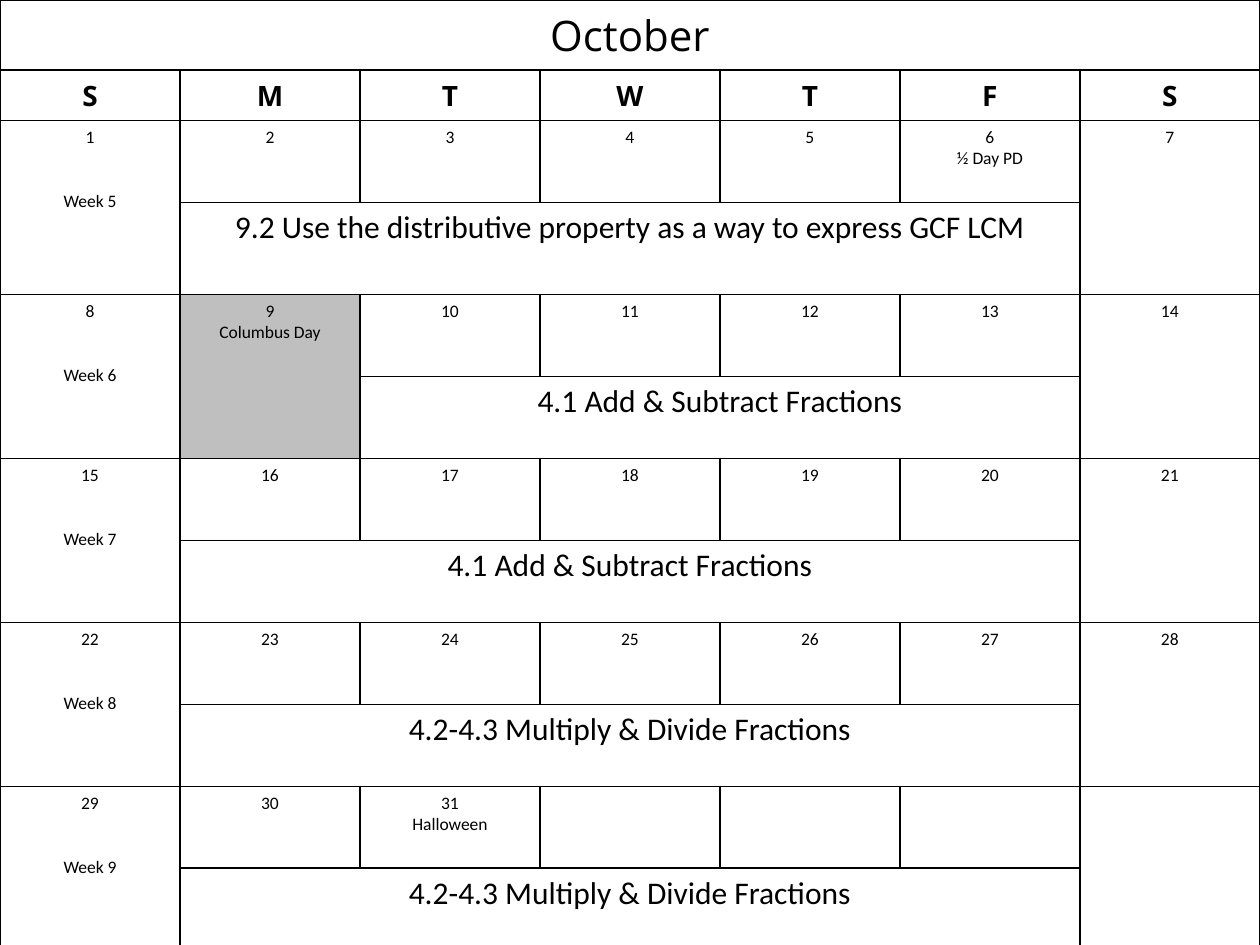
import lxml.etree
import pptx
import pptx.dml.color
import pptx.enum.text
import pptx.oxml.ns
import pptx.util

PX = 914400 // 126
PAGE_WIDTH, PAGE_HEIGHT = 1260, 945
BLACK, WHITE, GREY = "000000", "FFFFFF", "BFBFBF"
DAYS = 7
TITLE_HEIGHT, HEADER_HEIGHT, HALF_WEEK, TALL_HALF = 66, 48, 82, 92
BLANK_LINES = 24.4  # points between a Sunday's date and its week label

LESSONS = [
    "9.2 Use the distributive property as a way to express GCF LCM",
    "4.1 Add & Subtract Fractions",
    "4.1 Add & Subtract Fractions",
    "4.2-4.3 Multiply & Divide Fractions",
    "4.2-4.3 Multiply & Divide Fractions",
]
EVENTS = {6: "½ Day PD", 9: "Columbus Day", 31: "Halloween"}
HOLIDAY, LAST_DATE, FIRST_WEEK = 9, 31, 5


def color(value):
    return pptx.dml.color.RGBColor.from_string(value)


def write(frame, *lines, size=10, font="Calibri", bold=False, gap=0):
    """Fill a text frame with centred lines, gap points apart."""
    for index, line in enumerate(lines):
        para = frame.add_paragraph() if index else frame.paragraphs[0]
        para.alignment = pptx.enum.text.PP_ALIGN.CENTER
        if index and gap:
            para.space_before = pptx.util.Pt(gap)
        span = para.add_run()
        span.text = line
        span.font.size = pptx.util.Pt(size)
        span.font.name = font
        span.font.bold = bold
        span.font.color.rgb = color(BLACK)


class CalendarPage:
    def __init__(self, deck):
        self.page = deck.slides.add_slide(deck.slide_layouts[6])
        self.line_color = BLACK
        self.line_width = pptx.util.Pt(1)

    def border(self, cell):
        properties = cell._tc.get_or_add_tcPr()
        for side in ("lnL", "lnR", "lnT", "lnB"):
            line = lxml.etree.SubElement(
                properties, pptx.oxml.ns.qn(f"a:{side}"), w=str(self.line_width))
            fill = lxml.etree.SubElement(line, pptx.oxml.ns.qn("a:solidFill"))
            lxml.etree.SubElement(
                fill, pptx.oxml.ns.qn("a:srgbClr"), val=self.line_color)

    def paint(self, cell, fill):
        cell.fill.solid()
        cell.fill.fore_color.rgb = color(fill)

    def grid(self, row_heights, columns):
        """Add a bordered white table that fills the page width."""
        table = self.page.shapes.add_table(
            len(row_heights), columns, 0, 0,
            PAGE_WIDTH * PX, sum(row_heights) * PX).table
        table.first_row = table.horz_banding = False
        for column in table.columns:
            column.width = PAGE_WIDTH // columns * PX
        for row, height in zip(table.rows, row_heights):
            row.height = height * PX
        for cell in table.iter_cells():
            self.border(cell)
            self.paint(cell, WHITE)
        return table

    def week(self, table, index, lesson):
        top = 2 + 2 * index
        lesson_start = 1
        for weekday in range(DAYS):
            date = index * DAYS + weekday + 1
            cell = table.cell(top, weekday)
            if weekday in (0, DAYS - 1) or date == HOLIDAY:
                cell.merge(table.cell(top + 1, weekday))
            if date == HOLIDAY:
                self.paint(cell, GREY)
                self.paint(table.cell(top + 1, weekday), GREY)
                lesson_start = weekday + 1
            if date > LAST_DATE:
                continue
            lines = [str(date)]
            if weekday == 0:
                lines.append(f"Week {FIRST_WEEK + index}")
            elif date in EVENTS:
                lines.append(EVENTS[date])
            write(cell.text_frame, *lines, gap=0 if weekday else BLANK_LINES)
        cell = table.cell(top + 1, lesson_start)
        cell.merge(table.cell(top + 1, DAYS - 2))
        write(cell.text_frame, lesson, size=18)


def main():
    deck = pptx.Presentation()
    deck.slide_width = PAGE_WIDTH * PX
    deck.slide_height = PAGE_HEIGHT * PX
    calendar = CalendarPage(deck)
    heights = [TITLE_HEIGHT, HEADER_HEIGHT, HALF_WEEK, TALL_HALF]
    heights += [HALF_WEEK] * (2 * len(LESSONS) - 2)
    table = calendar.grid(heights, DAYS)

    title = table.cell(0, 0)
    title.merge(table.cell(0, DAYS - 1))
    write(title.text_frame, "October", size=24, font="Open Sans")
    for column, letter in enumerate("SMTWTFS"):
        write(table.cell(1, column).text_frame, letter,
              size=16, font="Open Sans", bold=True)
    for index, lesson in enumerate(LESSONS):
        calendar.week(table, index, lesson)
    deck.save("out.pptx")


if __name__ == "__main__":
    main()
